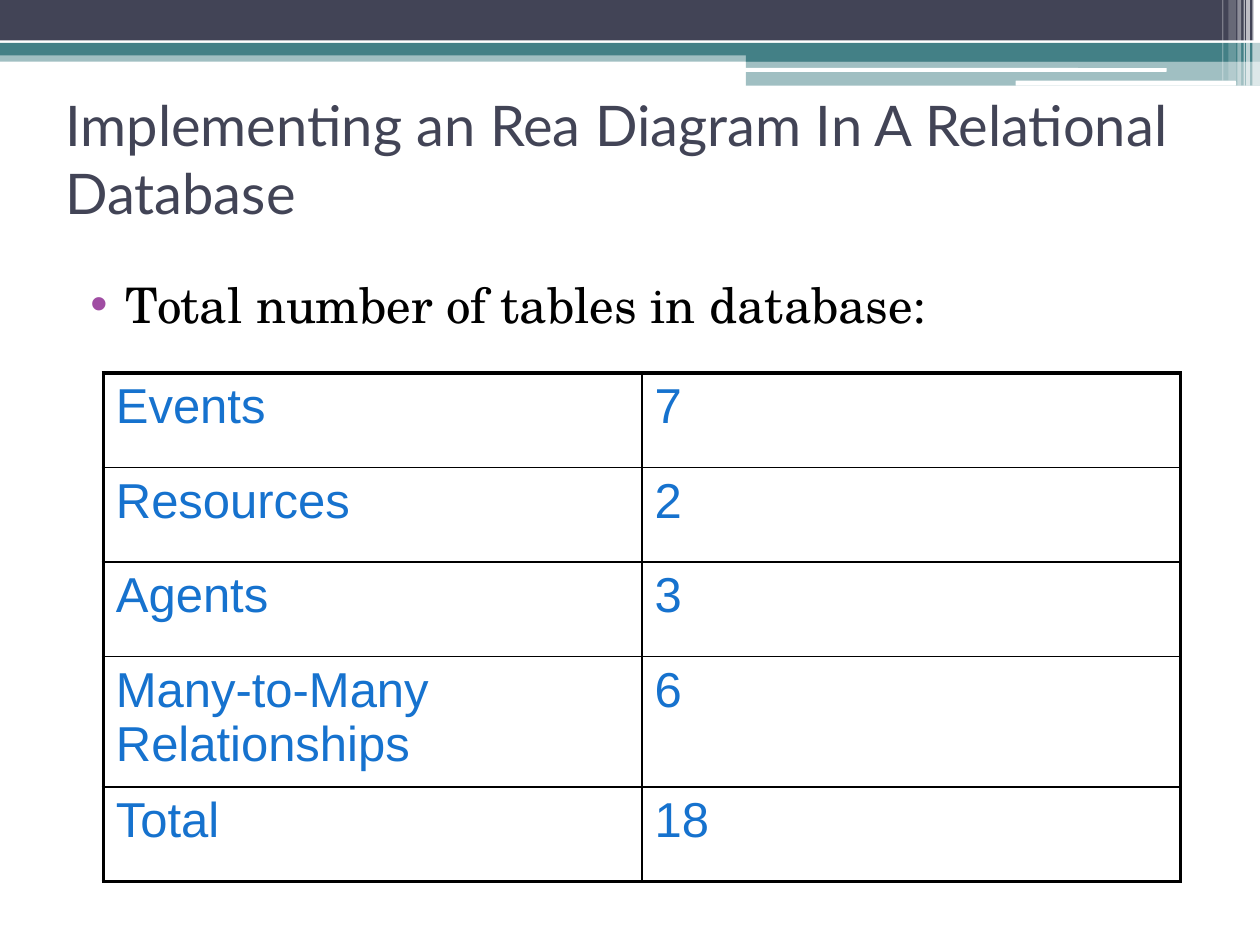
import dataclasses
import typing

import pptx
import pptx.dml.color
import pptx.enum.shapes
import pptx.enum.text
import pptx.oxml
import pptx.oxml.ns
import pptx.util

COLUMNS, ROWS = 100, 75
SLIDE_WIDTH, SLIDE_HEIGHT = pptx.util.Inches(10), pptx.util.Inches(7.5)
NAVY, TEAL, WHITE, BLACK, BLUE, PURPLE = (
    "424456", "438086", "FFFFFF", "000000", "1672CE", "A04DA3")
RECT = pptx.enum.shapes.MSO_SHAPE.RECTANGLE
ROUND = pptx.enum.shapes.MSO_SHAPE.ROUNDED_RECTANGLE
THICK, THIN = 2.25, 1


@dataclasses.dataclass
class Area:
    """A place on the slide, in columns and rows of the grid."""
    column: float
    row: float
    columns: float
    rows: float

    def lengths(self) -> list[int]:
        across, down = SLIDE_WIDTH / COLUMNS, SLIDE_HEIGHT / ROWS
        return [round(self.column * across), round(self.row * down),
                round(self.columns * across), round(self.rows * down)]


@dataclasses.dataclass
class Band:
    area: Area
    color: str
    opacity: int = 100
    kind: typing.Any = RECT


BANDS = [
    Band(Area(0, 4, 100, 0.9), TEAL, 50),
    Band(Area(0, 0, 99.5, 3.2), NAVY),
    Band(Area(0, 3.4, 100, 1), TEAL),
    Band(Area(59.2, 3.9, 40.8, 1), TEAL),
    Band(Area(59.2, 4.8, 40.8, 2), TEAL, 50),
    Band(Area(59.1, 5.4, 33.5, 0.3), WHITE, kind=ROUND),
    Band(Area(80.6, 6.4, 17.5, 0.4), WHITE, kind=ROUND),
]
# Column, width, height and opacity of each upright stripe
STRIPES = [
    (99.4, 0.6, 6.8, 65), (98.9, 0.3, 6.8, 65), (98.7, 0.1, 6.8, 60),
    (98.2, 0.3, 6.8, 40), (97.5, 0.6, 6.4, 20), (97, 0.1, 6.4, 30),
]
TABLE_AREA = Area(8.2, 29.6, 85.5, 37.9)
ROW_HEIGHTS = [7.5, 7.5, 7.5, 7.9, 7.5]
TABLE_COUNTS = [
    ("Events", "7"), ("Resources", "2"), ("Agents", "3"),
    ("Many-to-Many Relationships", "6"), ("Total", "18"),
]


def rgb(color: str) -> pptx.dml.color.RGBColor:
    return pptx.dml.color.RGBColor.from_string(color)


def element(xml: str) -> typing.Any:
    """Parse an XML snippet that uses the drawing namespace."""
    head, rest = xml.split(" ", 1)
    return pptx.oxml.parse_xml(f"{head} {pptx.oxml.ns.nsdecls('a')} {rest}")


def draw_band(page: typing.Any, band: Band) -> None:
    shape = page.shapes.add_shape(band.kind, *band.area.lengths())
    shape.shadow.inherit = False
    shape.line.fill.background()
    shape.fill.solid()
    shape.fill.fore_color.rgb = rgb(band.color)
    if band.opacity < 100:
        color = shape.fill._xPr.find(".//" + pptx.oxml.ns.qn("a:srgbClr"))
        color.append(element(f'<a:alpha val="{band.opacity * 1000}"/>'))


def write(frame: typing.Any, text: str, name: str, size: float, color: str) -> typing.Any:
    """Fill the first paragraph of a text frame and return it."""
    para = frame.paragraphs[0]
    span = para.add_run()
    span.text = text
    for key, value in {"name": name, "size": pptx.util.Pt(size)}.items():
        setattr(span.font, key, value)
    span.font.color.rgb = rgb(color)
    return para


def add_text_frame(page: typing.Any, area: Area, anchor: typing.Any) -> typing.Any:
    frame = page.shapes.add_textbox(*area.lengths()).text_frame
    for key, value in {"word_wrap": True, "vertical_anchor": anchor}.items():
        setattr(frame, key, value)
    return frame


def add_bullet(para: typing.Any) -> None:
    properties = para._p.get_or_add_pPr()
    properties.set("marL", str(pptx.util.Inches(0.4)))
    properties.set("indent", str(pptx.util.Inches(-0.28)))
    para.space_before = pptx.util.Pt(3)
    properties.append(element(f'<a:buClr ><a:srgbClr val="{PURPLE}"/></a:buClr>'))
    properties.append(element('<a:buFont typeface="Arial"/>'))
    properties.append(element('<a:buChar char="•"/>'))


def set_borders(cell: typing.Any, widths: dict[str, float]) -> None:
    properties = cell._tc.get_or_add_tcPr()
    for side, width in widths.items():
        properties.append(element(
            f'<a:ln{side} w="{pptx.util.Pt(width)}"><a:solidFill>'
            f'<a:srgbClr val="{BLACK}"/></a:solidFill></a:ln{side}>'))


def draw_table(page: typing.Any) -> None:
    last = len(TABLE_COUNTS) - 1
    table = page.shapes.add_table(last + 1, 2, *TABLE_AREA.lengths()).table
    for key in ("first_row", "horz_banding"):
        setattr(table, key, False)
    for r, (height, texts) in enumerate(zip(ROW_HEIGHTS, TABLE_COUNTS)):
        table.rows[r].height = round(SLIDE_HEIGHT * height / ROWS)
        for c, text in enumerate(texts):
            cell = table.cell(r, c)
            outer = {"L": c == 0, "R": c == 1, "T": r == 0, "B": r == last}
            set_borders(cell, {side: THICK if edge else THIN
                               for side, edge in outer.items()})
            cell.fill.background()
            write(cell.text_frame, text, "Arial", 28, BLUE)


def main() -> None:
    deck = pptx.Presentation()
    deck.slide_width, deck.slide_height = SLIDE_WIDTH, SLIDE_HEIGHT
    page = deck.slides.add_slide(deck.slide_layouts[6])
    stripes = [Band(Area(column, 0, width, height), WHITE, opacity)
               for column, width, height, opacity in STRIPES]
    for band in BANDS + stripes:
        draw_band(page, band)
    anchors = pptx.enum.text.MSO_ANCHOR
    body = add_text_frame(page, Area(5, 21.3, 92.7, 49.5), anchors.TOP)
    add_bullet(write(body, "Total number of tables in database:",
                     "TeX Gyre Schola", 28, BLACK))
    draw_table(page)
    title = add_text_frame(page, Area(4.2, 6.7, 90, 11.7), anchors.MIDDLE)
    write(title, "Implementing an Rea Diagram In A Relational Database",
          "Lato", 32, NAVY)
    deck.save("out.pptx")


if __name__ == "__main__":
    main()
